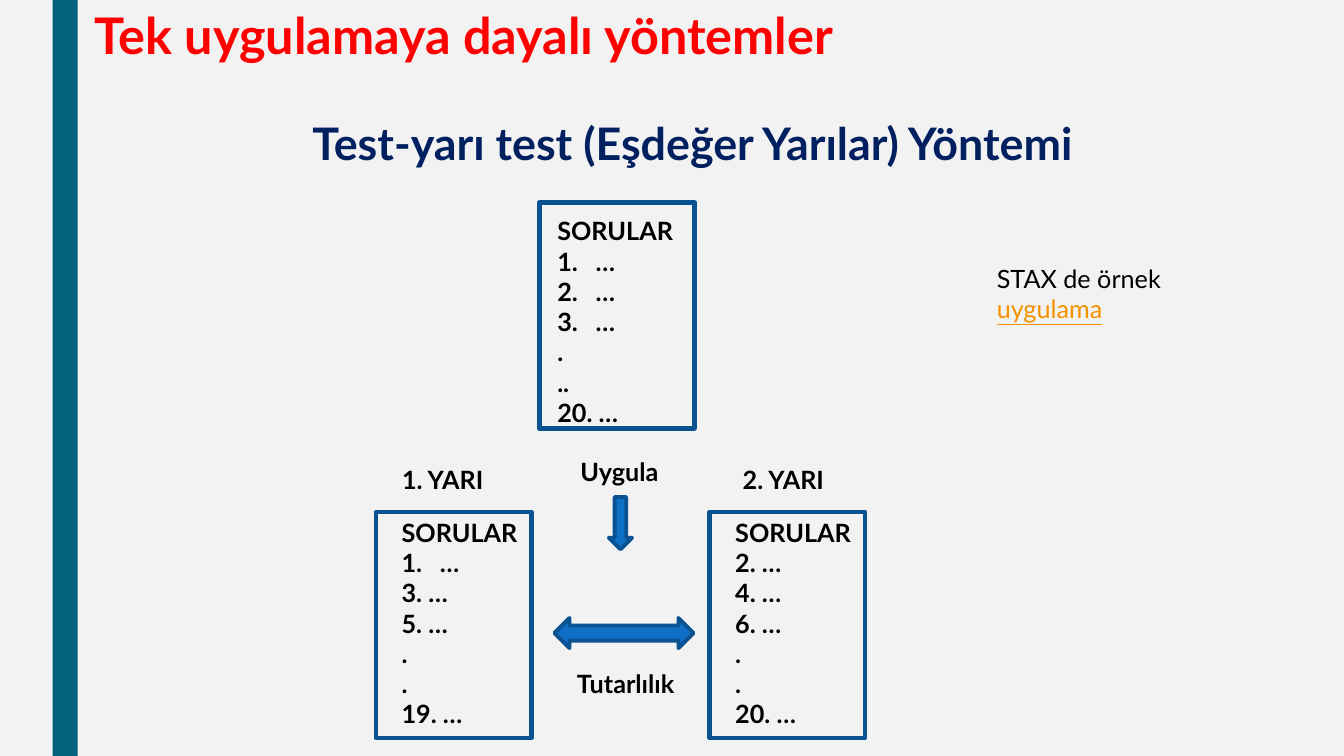
from pptx import Presentation
from pptx import util as u
from pptx.dml import color
from pptx.enum import shapes, text
from pptx.oxml import xmlchemy

FONT = "Lato"
TEAL, BLUE, EDGE, NAVY = "04617B", "0F6FC6", "0B5292", "002060"
RED, ORANGE, BLACK, PAPER = "FF0000", "F49100", "000000", "F2F2F2"
CARD_WIDTH, CARD_HEIGHT = 110.9, 161.3
HANG = 27.36


def paint(target, value):
    """Set a fill, or the colour of a font, from a hex string."""
    if hasattr(target, "solid"):
        target.solid()
        target = target.fore_color
    else:
        target = target.color
    target.rgb = color.RGBColor.from_string(value)


def add_span(para, words, size=18, ink=BLACK, bold=True, underline=None):
    span = para.add_run()
    span.text = words
    font = span.font
    font.name, font.size, font.bold = FONT, u.Pt(size), bold
    font.underline = underline
    paint(font, ink)


def hang(para, numbered):
    props = para._p.get_or_add_pPr()
    props.set("marL", str(u.Pt(HANG)))
    props.set("indent", str(u.Pt(-HANG)))
    if numbered:
        bullet = xmlchemy.OxmlElement("a:buAutoNum")
        bullet.set("type", "arabicPeriod")
        props.append(bullet)


class Sketch:
    """Draws the elements of one page in a shared style."""

    def __init__(self, page):
        self.page = page

    def shape(self, kind, left, top, width, height, fill=None, line=None, weight=2.75):
        item = self.page.shapes.add_shape(
            kind, u.Pt(left), u.Pt(top), u.Pt(width), u.Pt(height))
        item.shadow.inherit = False
        if fill:
            paint(item.fill, fill)
        else:
            item.fill.background()
        if line:
            paint(item.line.fill, line)
            item.line.width = u.Pt(weight)
        else:
            item.line.fill.background()

    def frame(self, left, top, width, height):
        box = self.page.shapes.add_textbox(
            u.Pt(left), u.Pt(top), u.Pt(width), u.Pt(height))
        box.text_frame.word_wrap = True
        return box.text_frame

    def label(self, words, left, top, width, height=29, spacing=None, middle=False, **style):
        frame = self.frame(left, top, width, height)
        if middle:
            frame.vertical_anchor = text.MSO_ANCHOR.MIDDLE
        para = frame.paragraphs[0]
        para.line_spacing = spacing
        add_span(para, words, **style)
        return para

    def card(self, left, top, inset, drop, numbered, items):
        """Outlined question list; the first items are auto-numbered."""
        self.shape(shapes.MSO_SHAPE.RECTANGLE, left, top, CARD_WIDTH, CARD_HEIGHT,
                   line=EDGE, weight=3.25)
        frame = self.frame(left + inset, top + drop, 105.1, 159.8)
        add_span(frame.paragraphs[0], "SORULAR")
        for index, item in enumerate(items):
            para = frame.add_paragraph()
            hang(para, index < numbered)
            add_span(para, item)


def main():
    deck = Presentation()
    deck.slide_width, deck.slide_height = u.Pt(960), u.Pt(540)
    page = deck.slides.add_slide(deck.slide_layouts[6])
    paint(page.background.fill, PAPER)
    sketch = Sketch(page)

    # Side band and headings
    sketch.shape(shapes.MSO_SHAPE.RECTANGLE, 37.5, 0, 18, 540, fill=TEAL)
    sketch.label("Test-yarı test (Eşdeğer Yarılar) Yöntemi", 216, 83.5, 686, 90,
                 spacing=0.89, size=32, ink=NAVY)
    sketch.label("Tek uygulamaya dayalı yöntemler", 60.5, 0, 594, 55.4,
                 spacing=0.89, middle=True, size=36, ink=RED)

    # Whole test and its two halves
    sketch.card(385.2, 144.7, 5.8, 5.8, 3, ["…", "…", "…", ".", "..", "20. …"])
    sketch.card(268.6, 365.8, 11.2, 0, 1, ["…", "3. …", "5. …", ".", ".", "19. …"])
    sketch.card(506.9, 365.8, 11.2, 0, 0, ["2. …", "4. …", "6. …", ".", ".", "20. …"])

    # Arrows
    sketch.shape(shapes.MSO_SHAPE.DOWN_ARROW, 434.9, 355, 16.6, 37.4, BLUE, EDGE)
    sketch.shape(shapes.MSO_SHAPE.LEFT_RIGHT_ARROW, 396, 441.4, 99.4, 21.6, BLUE, EDGE)

    # Labels
    for words, left, top, width in (
        ("Uygula", 407.5, 322.6, 77.8),
        ("Tutarlılık", 405, 473.8, 95),
        ("1. YARI", 280.1, 328.3, 77.8),
        ("2. YARI", 523.4, 328.3, 77.8),
    ):
        sketch.label(words, left, top, width)

    # Example note
    note = sketch.label("STAX de örnek ", 704.9, 184.3, 198, 51, bold=False)
    add_span(note, "uygulama", ink=ORANGE, bold=False, underline=True)

    deck.save("out.pptx")


if __name__ == "__main__":
    main()
